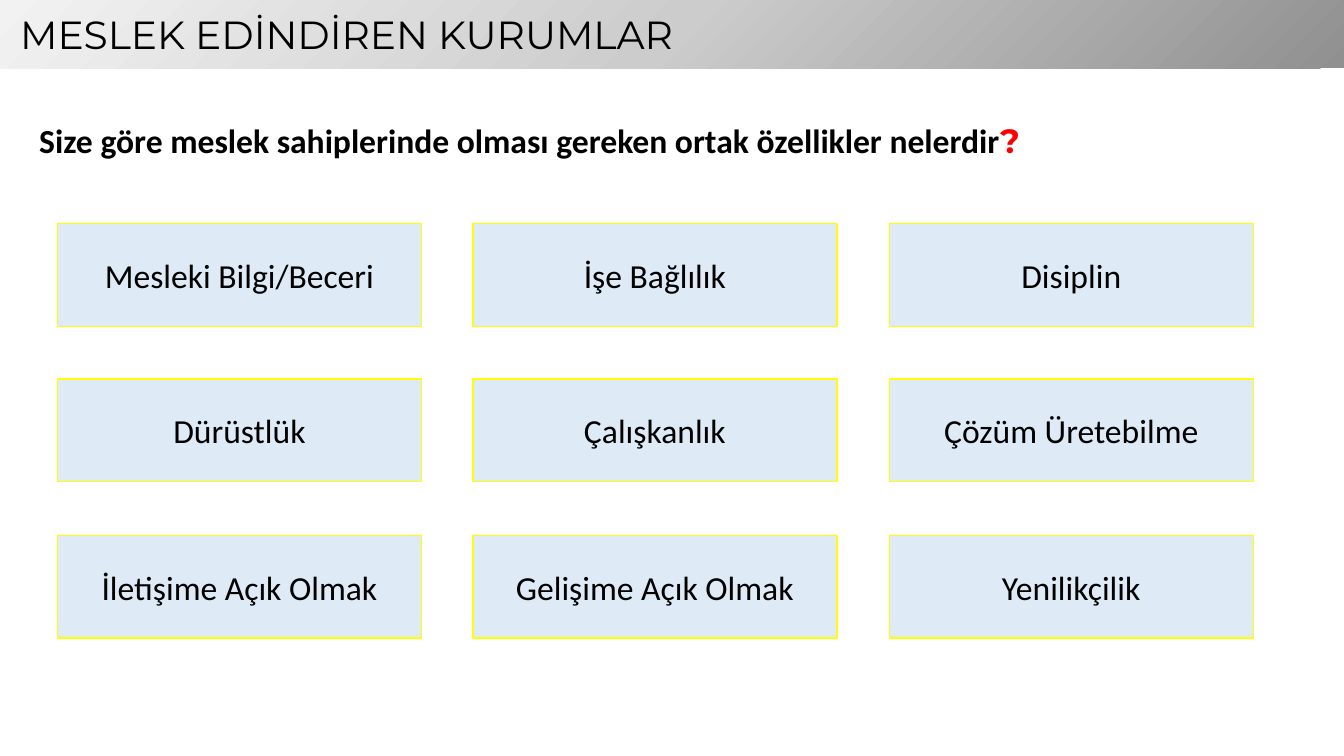
"""Build a slide of the traits shared by people with a profession."""
from copy import deepcopy
from dataclasses import dataclass

from pptx import Presentation
from pptx.dml.color import RGBColor
from pptx.enum.shapes import MSO_SHAPE
from pptx.enum.text import MSO_ANCHOR, MSO_AUTO_SIZE, PP_ALIGN
from pptx.oxml.ns import qn
from pptx.slide import Slide
from pptx.text.text import TextFrame
from pptx.util import Emu, Pt

RECT = MSO_SHAPE.RECTANGLE
MIDDLE = MSO_ANCHOR.MIDDLE
NO_FIT = MSO_AUTO_SIZE.NONE
GROW = MSO_AUTO_SIZE.SHAPE_TO_FIT_TEXT
LEFT = PP_ALIGN.LEFT
CENTER = PP_ALIGN.CENTER

BLACK = RGBColor(0x00, 0x00, 0x00)
RED = RGBColor(0xFF, 0x00, 0x00)
YELLOW = RGBColor(0xFF, 0xFF, 0x00)
PALE = RGBColor(0xDE, 0xEB, 0xF7)
DARK = RGBColor(0x90, 0x90, 0x90)
GRAY = RGBColor(0xCC, 0xCC, 0xCC)
LIGHT = RGBColor(0xF2, 0xF2, 0xF2)

BODY = "Calibri"
HEAD = "Montserrat"
SCALE = 9144
WIDTH, HEIGHT = 1333, 750
COLS = 3
TRAITS = (
    "Mesleki Bilgi/Beceri", "İşe Bağlılık", "Disiplin",
    "Dürüstlük", "Çalışkanlık", "Çözüm Üretebilme",
    "İletişime Açık Olmak", "Gelişime Açık Olmak", "Yenilikçilik",
)


@dataclass(frozen=True)
class Run:
    text: str
    font: str = BODY
    size: int = 24
    color: RGBColor = BLACK
    bold: bool = False


@dataclass(frozen=True)
class Card:
    text: str
    left: int
    top: int
    width: int = 361
    height: int = 102


def px(count: int) -> Emu:
    return Emu(count * SCALE)


def write(frame: TextFrame, align: PP_ALIGN, *runs: Run) -> None:
    frame.word_wrap = True
    line = frame.paragraphs[0]
    line.alignment = align
    for item in runs:
        run = line.add_run()
        run.text = item.text
        run.font.name = item.font
        run.font.size = Pt(item.size)
        run.font.bold = item.bold
        run.font.color.rgb = item.color


def add_title(slide: Slide) -> None:
    title = slide.shapes.title
    title.left, title.top = px(0), px(0)
    title.width, title.height = px(WIDTH), px(68)
    title.fill.gradient()
    title.fill.gradient_angle = 135
    stops = next(title._element.spPr.iter(qn("a:gsLst")))
    stops.append(deepcopy(stops[-1]))
    shades = ((0, DARK), (0.5, GRAY), (1, LIGHT))
    for stop, (place, color) in zip(title.fill.gradient_stops, shades):
        stop.position = place
        stop.color.rgb = color
    frame = title.text_frame
    frame.auto_size = NO_FIT
    frame.vertical_anchor = MIDDLE
    frame.margin_left = px(20)
    write(frame, LEFT, Run("MESLEK EDİNDİREN KURUMLAR", HEAD, 28))


def add_query(slide: Slide) -> None:
    box = slide.shapes.add_textbox(px(29), px(114), px(1118), px(50))
    box.text_frame.auto_size = GROW
    write(
        box.text_frame,
        LEFT,
        Run("Size göre meslek sahiplerinde olması gereken ortak özellikler nelerdir", bold=True),
        Run("?", HEAD, color=RED, bold=True),
    )


def add_card(slide: Slide, card: Card) -> None:
    box = slide.shapes.add_shape(
        RECT, px(card.left), px(card.top), px(card.width), px(card.height)
    )
    box.shadow.inherit = False
    box.fill.solid()
    box.fill.fore_color.rgb = PALE
    box.line.color.rgb = YELLOW
    box.line.width = Pt(1)
    box.text_frame.vertical_anchor = MIDDLE
    write(box.text_frame, CENTER, Run(card.text))


def main() -> None:
    deck = Presentation()
    deck.slide_width, deck.slide_height = px(WIDTH), px(HEIGHT)
    slide = deck.slides.add_slide(deck.slide_layouts.get_by_name("Title Only"))
    add_title(slide)
    add_query(slide)
    for index, trait in enumerate(TRAITS):
        row, col = divmod(index, COLS)
        add_card(slide, Card(trait, 57 + col * 825 // 2, 222 + row * 309 // 2))
    deck.save("out.pptx")


if __name__ == "__main__":
    main()
